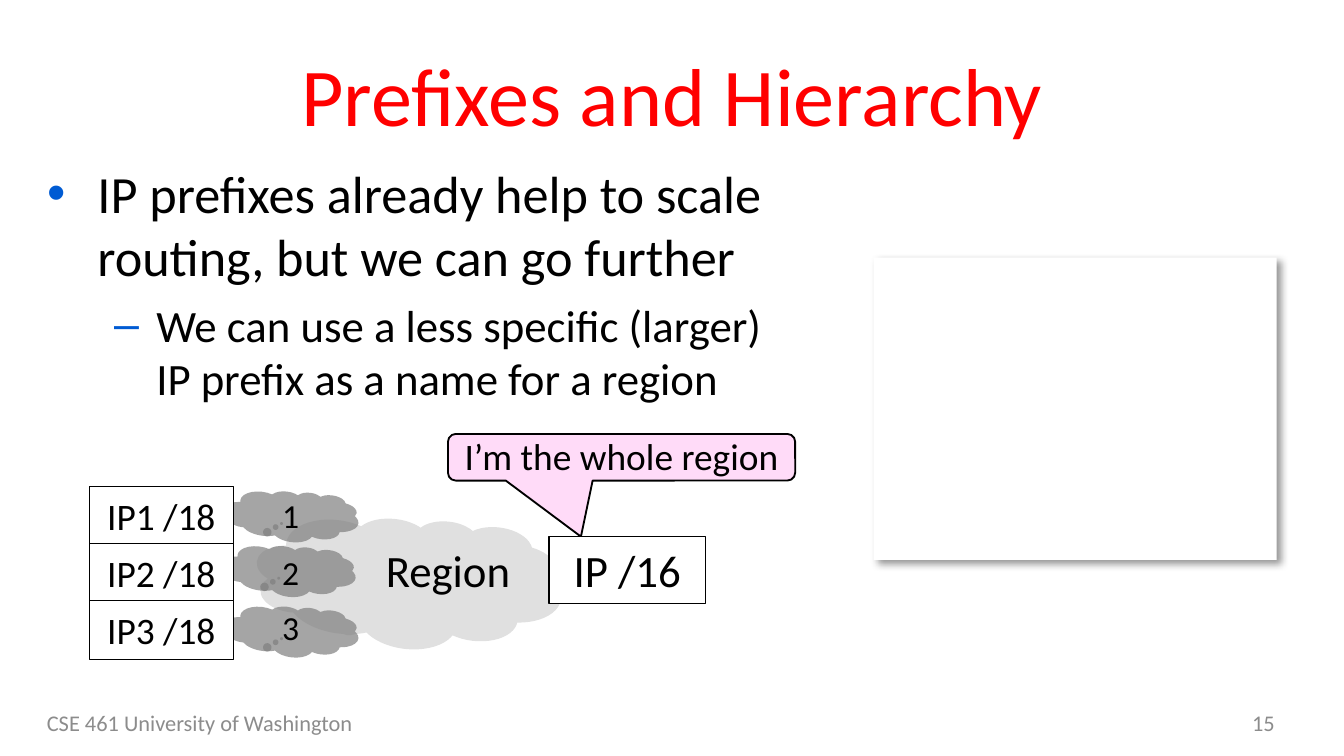
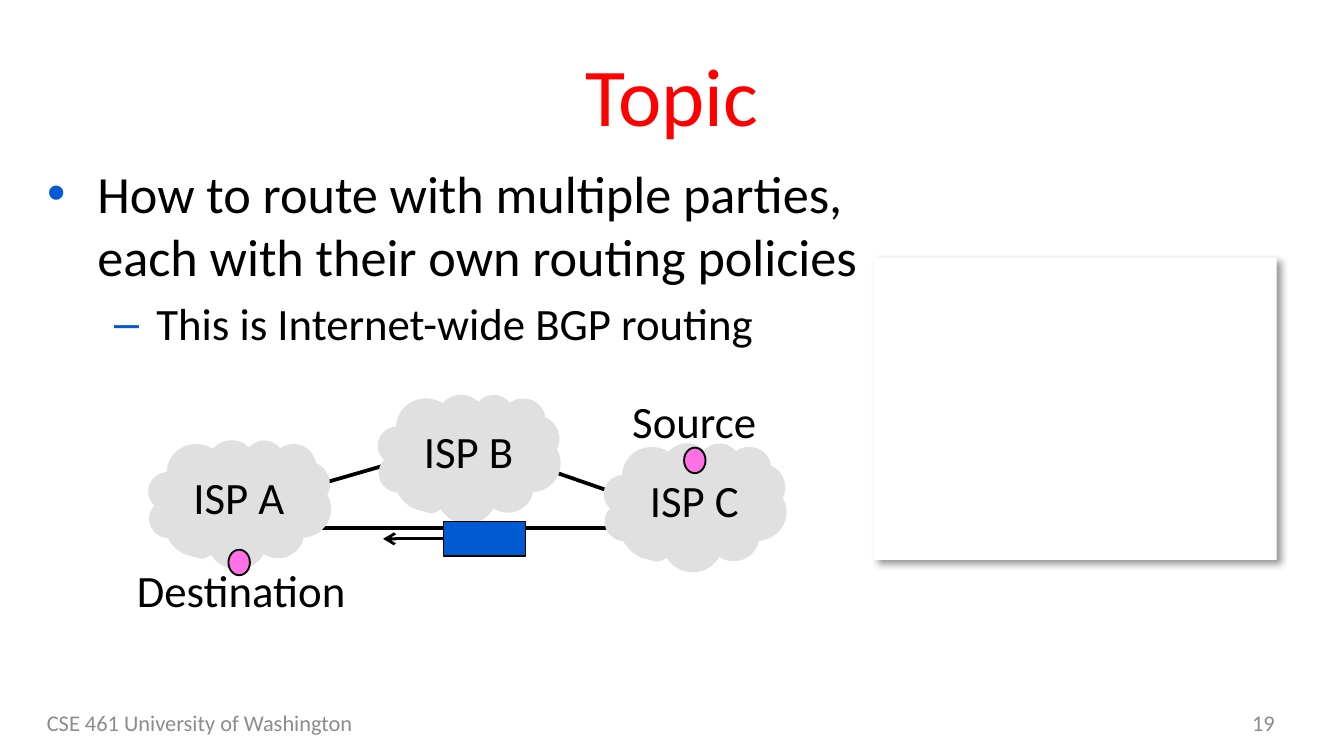
from dataclasses import dataclass

from lxml.etree import SubElement
from pptx import Presentation
from pptx.dml.color import RGBColor
from pptx.enum.shapes import MSO_CONNECTOR, MSO_SHAPE
from pptx.enum.text import MSO_ANCHOR, MSO_AUTO_SIZE, PP_ALIGN
from pptx.oxml.ns import qn
from pptx.util import Pt


@dataclass(frozen=True)
class Theme:
    font: str = "Calibri"
    title: str = "FF0000"
    ink: str = "000000"
    paper: str = "FFFFFF"
    accent: str = "005BD3"
    muted: str = "8C8C8C"
    cloud: str = "E0E0E0"
    subcloud: str = "7F7F7F"
    speech: str = "FFB8F2"
    dot: str = "FF71E5"
    title_size: int = 44
    body_size: int = 28
    label_size: int = 24
    box_size: int = 20
    digit_size: int = 18
    footer_size: int = 12


T = Theme()
CLOUD_TILT = 6.6
CLOUD_TAIL = (-0.08, 0.162)


def write(tf, text, size=T.label_size, color=T.ink, align=PP_ALIGN.CENTER,
          anchor=MSO_ANCHOR.TOP, wrap=True, add=False):
    """Fill the frame's first paragraph, or a new one with add, and return it."""
    tf.auto_size = MSO_AUTO_SIZE.NONE
    tf.word_wrap = wrap
    tf.vertical_anchor = anchor
    p = tf.add_paragraph() if add else tf.paragraphs[0]
    p.text = text
    p.alignment = align
    for r in p.runs:
        r.font.name = T.font
        r.font.size = Pt(size)
        r.font.color.rgb = RGBColor.from_string(color)
    return p


def draw(s, kind, box, fill, line=None, width=1, alpha=None, tilt=0, adj=()):
    sp = s.shapes.add_shape(kind, *map(Pt, box))
    sp.shadow.inherit = False
    sp.rotation = tilt
    for i, value in enumerate(adj):
        sp.adjustments[i] = value
    sp.fill.solid()
    sp.fill.fore_color.rgb = RGBColor.from_string(fill)
    if alpha:
        clr = sp._element.spPr.find(qn("a:solidFill")).find(qn("a:srgbClr"))
        SubElement(clr, qn("a:alpha"), val=str(alpha * 1000))
    if line:
        sp.line.color.rgb = RGBColor.from_string(line)
        sp.line.width = Pt(width)
    else:
        sp.line.fill.background()
    return sp


prs = Presentation()
prs.slide_width, prs.slide_height = Pt(720), Pt(405)

# Shared frame: panel, footer, title and bullets
pages = [
    ("15", "Prefixes and Hierarchy",
     ["IP prefixes already help to scale routing, but we can go further",
      "We can use a less specific (larger)\vIP prefix as a name for a region"]),
    ("19", "Topic",
     ["How to route with multiple parties, each with their own routing policies",
      "This is Internet-wide BGP routing"]),
]
levels = [("•", 27, -27, T.body_size), ("–", 58.5, -22.5, T.label_size)]

for number, title, bullets in pages:
    s = prs.slides.add_slide(prs.slide_layouts[1])
    panel = draw(s, MSO_SHAPE.RECTANGLE, (468, 138, 216, 162), T.paper)
    shadow = SubElement(panel._element.spPr.find(qn("a:effectLst")), qn("a:outerShdw"),
                        blurRad=str(Pt(4)), dist=str(Pt(3)), dir=str(45 * 60000),
                        algn="tl", rotWithShape="0")
    clr = SubElement(shadow, qn("a:srgbClr"), val=T.ink)
    SubElement(clr, qn("a:alpha"), val="40000")

    for text, left, width, align in [
        ("CSE 461 University of Washington", 18, 228, PP_ALIGN.LEFT),
        (number, 522, 168, PP_ALIGN.RIGHT),
    ]:
        tb = s.shapes.add_textbox(Pt(left), Pt(376.5), Pt(width), Pt(21.6))
        write(tb.text_frame, text, T.footer_size, T.muted, align, MSO_ANCHOR.MIDDLE)

    body = s.placeholders[1]
    for ph, box in [(s.shapes.title, (18, 16.5, 684, 67.5)), (body, (18, 82.8, 450, 282))]:
        ph.left, ph.top, ph.width, ph.height = map(Pt, box)
    write(s.shapes.title.text_frame, title, T.title_size, T.title, anchor=MSO_ANCHOR.MIDDLE)

    for level, (text, (char, margin, indent, size)) in enumerate(zip(bullets, levels)):
        p = write(body.text_frame, text, size, align=PP_ALIGN.LEFT, add=level > 0)
        p.level = level
        pPr = p._p.get_or_add_pPr()
        pPr.set("marL", str(Pt(margin)))
        pPr.set("indent", str(Pt(indent)))
        spacing = SubElement(pPr, qn("a:spcBef"))
        SubElement(spacing, qn("a:spcPct"), val="20000")
        SubElement(SubElement(pPr, qn("a:buClr")), qn("a:srgbClr"), val=T.accent)
        SubElement(pPr, qn("a:buFont"), typeface="Arial")
        SubElement(pPr, qn("a:buChar"), char=char)

hierarchy, topic = prs.slides

# Prefixes and Hierarchy: three /18 prefixes inside one /16 region
s = hierarchy
speech = draw(s, MSO_SHAPE.ROUNDED_RECTANGULAR_CALLOUT, (240, 232.5, 186, 25), T.speech,
              T.ink, alpha=50, adj=(-0.117, 1.701, 0.167))
tf = speech.text_frame
tf.margin_left = tf.margin_right = tf.margin_bottom = 0
tf.margin_top = Pt(3.6)
write(tf, "I’m the whole region", T.box_size, anchor=MSO_ANCHOR.BOTTOM)

draw(s, MSO_SHAPE.CLOUD_CALLOUT, (138, 278, 162, 68.4), T.cloud, T.cloud, 2,
     tilt=CLOUD_TILT, adj=CLOUD_TAIL)
tb = s.shapes.add_textbox(Pt(192), Pt(287.3), Pt(96), Pt(36))
write(tb.text_frame, "Region")

for left, top in [(121.7, 263), (120.2, 292.3), (121.7, 324.7)]:
    draw(s, MSO_SHAPE.CLOUD_CALLOUT, (left, top, 70.5, 27.4), T.subcloud, alpha=70,
         tilt=CLOUD_TILT, adj=CLOUD_TAIL)
for digit, top in [("1", 261.4), ("2", 292.3), ("3", 321.8)]:
    tb = s.shapes.add_textbox(Pt(144), Pt(top), Pt(24), Pt(28.8))
    write(tb.text_frame, digit, T.digit_size, align=PP_ALIGN.LEFT, wrap=False)

prefix_boxes = [("IP /16", (294, 287.3, 84, 36), T.label_size)]
prefix_boxes += [(f"IP{i + 1} /18", (48, 260.6 + 30.6 * i, 77, 31.5), T.box_size)
                 for i in range(3)]
for text, box, size in prefix_boxes:
    sp = draw(s, MSO_SHAPE.RECTANGLE, box, T.paper, T.ink, 0.75)
    write(sp.text_frame, text, size, wrap=False)

# Topic: three linked ISPs and a packet on its way to the destination
s = topic
for x1, y1, x2, y2, width, arrow in [
    (157.7, 283, 343.4, 283, 2, False),
    (271.4, 244, 337.7, 267, 2, False),
    (169.2, 260, 211.7, 247.7, 2, False),
    (237.6, 288.7, 205.2, 288.7, 1.5, True),
]:
    c = s.shapes.add_connector(MSO_CONNECTOR.STRAIGHT, Pt(x1), Pt(y1), Pt(x2), Pt(y2))
    c.line.color.rgb = RGBColor.from_string(T.ink)
    c.line.width = Pt(width)
    if arrow:
        SubElement(c.line._get_or_add_ln(), qn("a:tailEnd"), type="arrow")
    SubElement(c._element.spPr, qn("a:effectLst"))

labels = [("Destination", 65.5, 298, 127.4), ("Source", 331.2, 207.4, 81.4)]
for name, left, top in [("ISP A", 80, 235.4), ("ISP B", 203, 211), ("ISP C", 324, 237)]:
    draw(s, MSO_SHAPE.CLOUD_CALLOUT, (left, top, 96.5, 68.4), T.cloud, T.cloud, 2,
         tilt=CLOUD_TILT, adj=CLOUD_TAIL)
    labels.append((name, left + 16.5, top + 12.6, 63))
for text, left, top, width in labels:
    tb = s.shapes.add_textbox(Pt(left), Pt(top), Pt(width), Pt(36))
    write(tb.text_frame, text, wrap=False)

for left, top in [(122.4, 294.5), (366.5, 239.8)]:
    draw(s, MSO_SHAPE.OVAL, (left, top, 11.5, 13.7), T.dot, T.ink)
draw(s, MSO_SHAPE.RECTANGLE, (237.6, 279.4, 44, 18.7), T.accent, T.ink)

prs.save("out.pptx")
